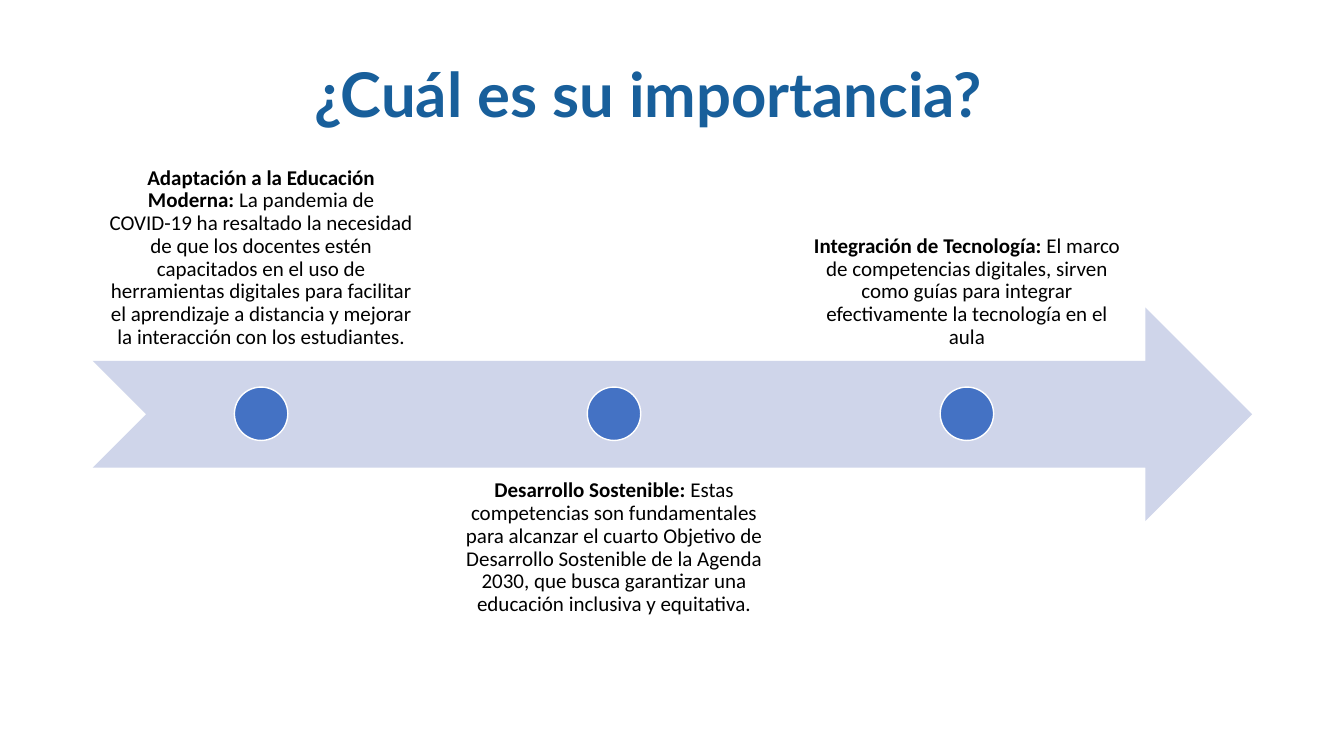
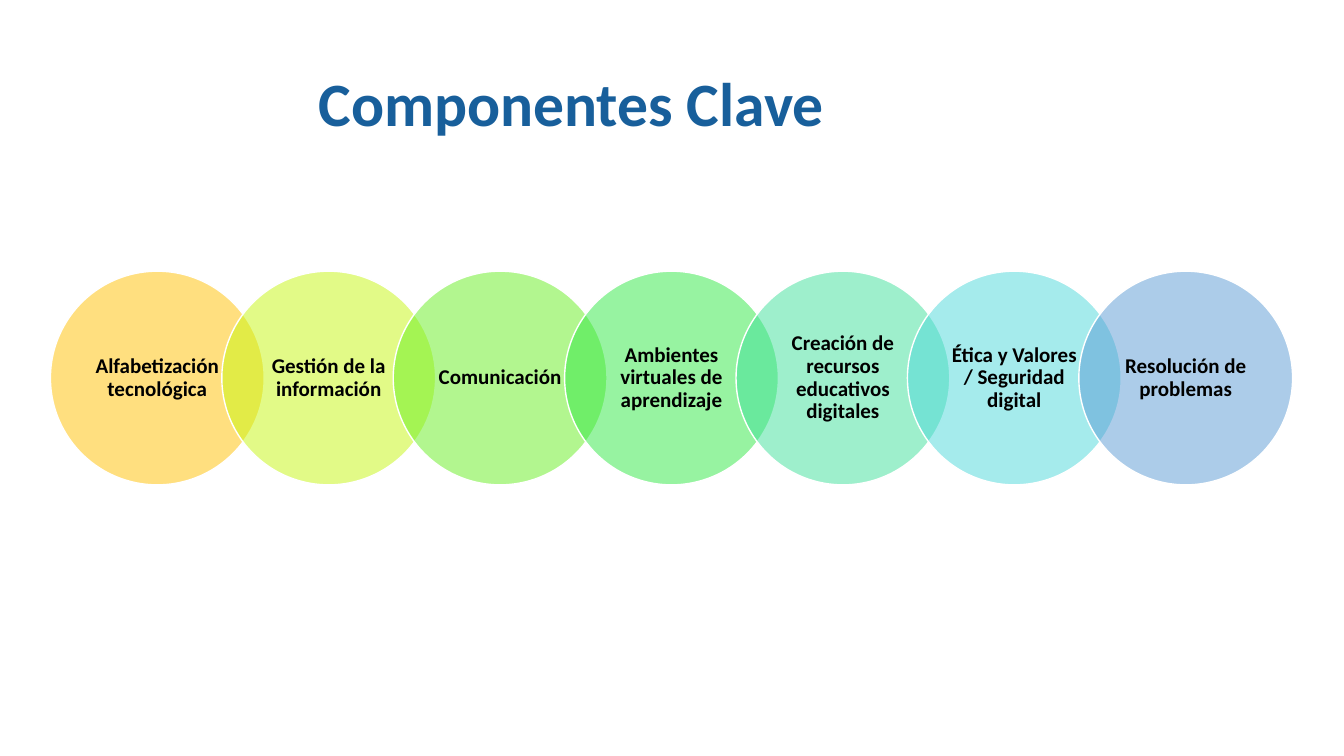
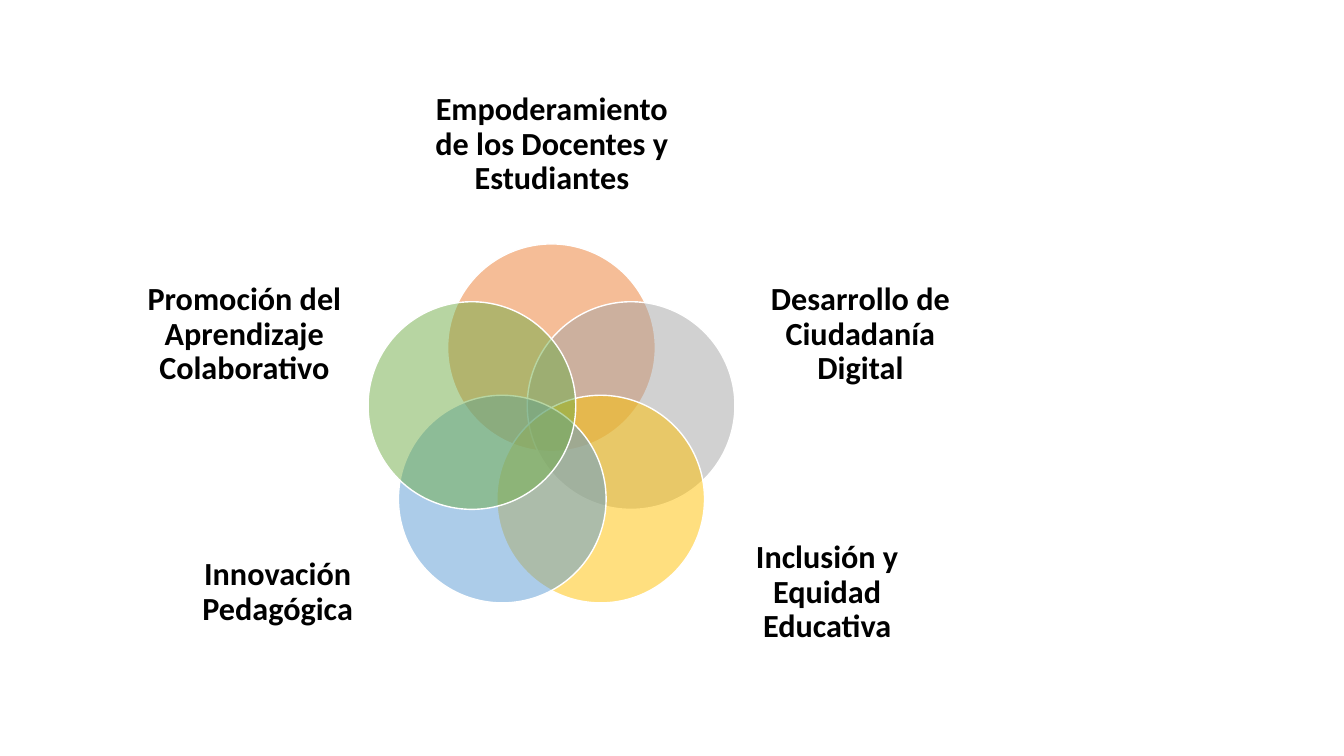
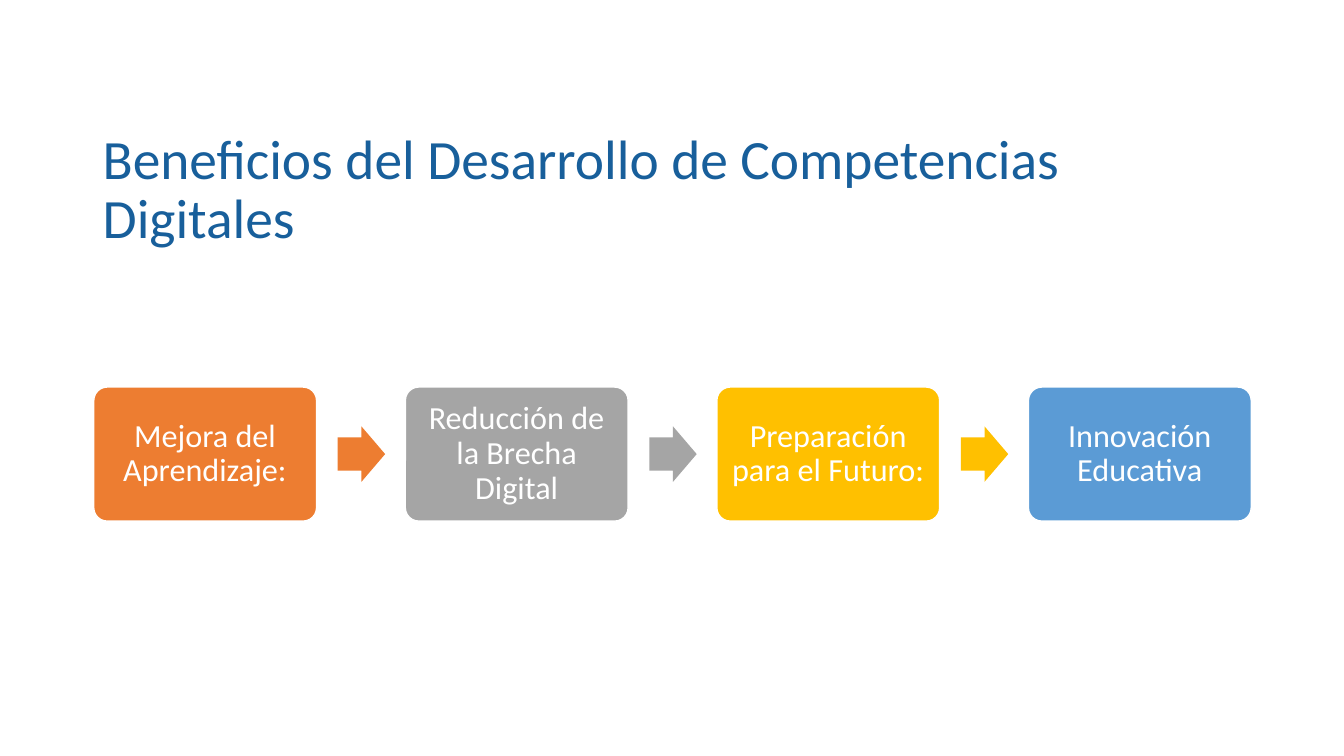
from dataclasses import dataclass
from math import cos, radians, sin

from lxml.etree import SubElement
from pptx import Presentation
from pptx.dml.color import RGBColor
from pptx.enum.shapes import MSO_SHAPE
from pptx.enum.text import MSO_ANCHOR, PP_ALIGN
from pptx.oxml.ns import qn
from pptx.util import Pt

EMU_PER_PX = 9144


@dataclass(frozen=True)
class Theme:
    body_font: str = "Calibri"
    accent_font: str = "Lato"
    title: str = "185F9B"
    ink: str = "000000"
    white: str = "FFFFFF"
    band: str = "CFD5EA"
    blue: str = "4472C4"
    orange: str = "ED7D31"
    gray: str = "A5A5A5"
    gold: str = "FFC000"
    sky: str = "5B9BD5"
    green: str = "70AD47"
    chain: tuple = ("FFC000", "C7F711", "67EF21", "30E845", "3FE19B", "4DD8DB", "5B9BD5")
    title_size: float = 44
    long_title_size: float = 39.6
    label_size: float = 23
    text_size: float = 15
    line_spacing: float = 0.9


THEME = Theme()

MILESTONES = (
    ("Adaptación a la Educación Moderna: ",
     "La pandemia de COVID-19 ha resaltado la necesidad de que los docentes estén "
     "capacitados en el uso de herramientas digitales para facilitar el aprendizaje "
     "a distancia y mejorar la interacción con los estudiantes."),
    ("Desarrollo Sostenible: ",
     "Estas competencias son fundamentales para alcanzar el cuarto Objetivo de "
     "Desarrollo Sostenible de la Agenda 2030, que busca garantizar una educación "
     "inclusiva y equitativa."),
    ("Integración de Tecnología: ",
     "El marco de competencias digitales, sirven como guías para integrar "
     "efectivamente la tecnología en el aula"),
)

COMPONENTS = (
    "Alfabetización tecnológica",
    "Gestión de la información",
    "Comunicación",
    "Ambientes virtuales de aprendizaje",
    "Creación de recursos educativos digitales",
    "Ética y Valores / Seguridad digital",
    "Resolución de problemas",
)

PETALS = (
    ("Empoderamiento de los Docentes y Estudiantes", THEME.orange, (428, 74, 239, 139)),
    ("Desarrollo de Ciudadanía Digital", THEME.gray, (746, 257, 215, 150)),
    ("Inclusión y Equidad Educativa", THEME.gold, (713, 513, 215, 150)),
    ("Innovación Pedagógica", THEME.sky, (168, 513, 215, 150)),
    ("Promoción del Aprendizaje Colaborativo", THEME.green, (135, 257, 215, 150)),
)

BENEFITS = (
    ("Mejora del Aprendizaje:", THEME.orange),
    ("Reducción de la Brecha Digital", THEME.gray),
    ("Preparación para el Futuro:", THEME.gold),
    ("Innovación Educativa", THEME.sky),
)


def px(*lengths):
    return [round(length * EMU_PER_PX) for length in lengths]


def write(shape, runs, size, color=THEME.ink, font=THEME.body_font,
          align=PP_ALIGN.CENTER, anchor=MSO_ANCHOR.MIDDLE, insets=(0, 0)):
    frame = shape.text_frame
    side, edge = px(*insets)
    frame_format = {
        "word_wrap": True, "vertical_anchor": anchor,
        "margin_left": side, "margin_right": side,
        "margin_top": edge, "margin_bottom": edge,
    }
    for name, value in frame_format.items():
        setattr(frame, name, value)
    paragraph = frame.paragraphs[0]
    paragraph.alignment = align
    paragraph.line_spacing = THEME.line_spacing
    for text, bold in runs:
        run = paragraph.add_run()
        run.text = text
        run_format = {"name": font, "size": Pt(size), "bold": bold}
        for name, value in run_format.items():
            setattr(run.font, name, value)
        run.font.color.rgb = RGBColor.from_string(color)


def add_text(slide, box, runs, size, **style):
    write(slide.shapes.add_textbox(*px(*box)), runs, size, **style)


def add_title(slide, box, text, size=THEME.title_size, bold=True, font=THEME.body_font):
    add_text(slide, box, [(text, bold)], size, color=THEME.title, font=font,
             align=PP_ALIGN.LEFT, insets=(10, 5))


def add_figure(slide, kind, box, fill, outlined=True, opacity=100, adjustments=()):
    figure = slide.shapes.add_shape(kind, *px(*box))
    figure.shadow.inherit = False
    figure.fill.solid()
    figure.fill.fore_color.rgb = RGBColor.from_string(fill)
    if opacity < 100:
        color = figure._element.spPr.find(qn("a:solidFill"))[0]
        SubElement(color, qn("a:alpha"), val=str(opacity * 1000))
    if outlined:
        figure.line.color.rgb = RGBColor.from_string(THEME.white)
        figure.line.width = Pt(1)
    else:
        figure.line.fill.background()
    for index, value in enumerate(adjustments):
        figure.adjustments[index] = value
    return figure


def build_importance(slide):
    add_title(slide, (302, 47, 765, 99), "¿Cuál es su importancia?", font=THEME.accent_font)
    add_figure(slide, MSO_SHAPE.NOTCHED_RIGHT_ARROW, (92, 305, 1150, 212),
               THEME.band, outlined=False)
    pitch, width, dot = 350, 334, 53
    for index, (heading, detail) in enumerate(MILESTONES):
        left = 92 + index * pitch
        top, anchor = (464, MSO_ANCHOR.TOP) if index % 2 else (146, MSO_ANCHOR.BOTTOM)
        add_text(slide, (left, top, width, 212), [(heading, True), (detail, False)],
                 THEME.text_size, anchor=anchor, insets=(12, 12))
        add_figure(slide, MSO_SHAPE.OVAL, (left + (width - dot) / 2, 384, dot, dot), THEME.blue)


def build_components(slide):
    add_title(slide, (306, 56, 532, 99), "Componentes Clave")
    pitch, diameter = 170, 212
    for index, (name, fill) in enumerate(zip(COMPONENTS, THEME.chain)):
        link = add_figure(slide, MSO_SHAPE.OVAL,
                          (50 + index * pitch, 269, diameter, diameter), fill, opacity=50)
        write(link, [(name, True)], THEME.text_size, insets=(12, 2))


def build_petals(slide):
    center_x, center_y, orbit, diameter = 547, 428, 83, 206
    for index, (name, fill, label_box) in enumerate(PETALS):
        angle = radians(index * 360 / len(PETALS))
        left = center_x + orbit * sin(angle) - diameter / 2
        top = center_y - orbit * cos(angle) - diameter / 2
        add_figure(slide, MSO_SHAPE.OVAL, (left, top, diameter, diameter), fill, opacity=50)
        add_text(slide, label_box, [(name, True)], THEME.label_size)


def build_benefits(slide):
    add_title(slide, (92, 140, 1150, 99), "Beneficios del Desarrollo de Competencias Digitales",
              size=THEME.long_title_size, bold=False)
    pitch = 309
    for index, (name, fill) in enumerate(BENEFITS):
        left = 93 + index * pitch
        card = add_figure(slide, MSO_SHAPE.ROUNDED_RECTANGLE, (left, 384, 221, 133),
                          fill, adjustments=(0.1,))
        write(card, [(name, False)], THEME.label_size, color=THEME.white, insets=(10, 10))
        if index < len(BENEFITS) - 1:
            add_figure(slide, MSO_SHAPE.RIGHT_ARROW, (left + 242, 423, 47, 55),
                       fill, outlined=False, adjustments=(0.6, 0.5))


def main():
    deck = Presentation()
    deck.slide_width, deck.slide_height = px(1333, 750)
    blank = deck.slide_layouts[6]
    for build in (build_importance, build_components, build_petals, build_benefits):
        build(deck.slides.add_slide(blank))
    deck.save("out.pptx")


if __name__ == "__main__":
    main()
